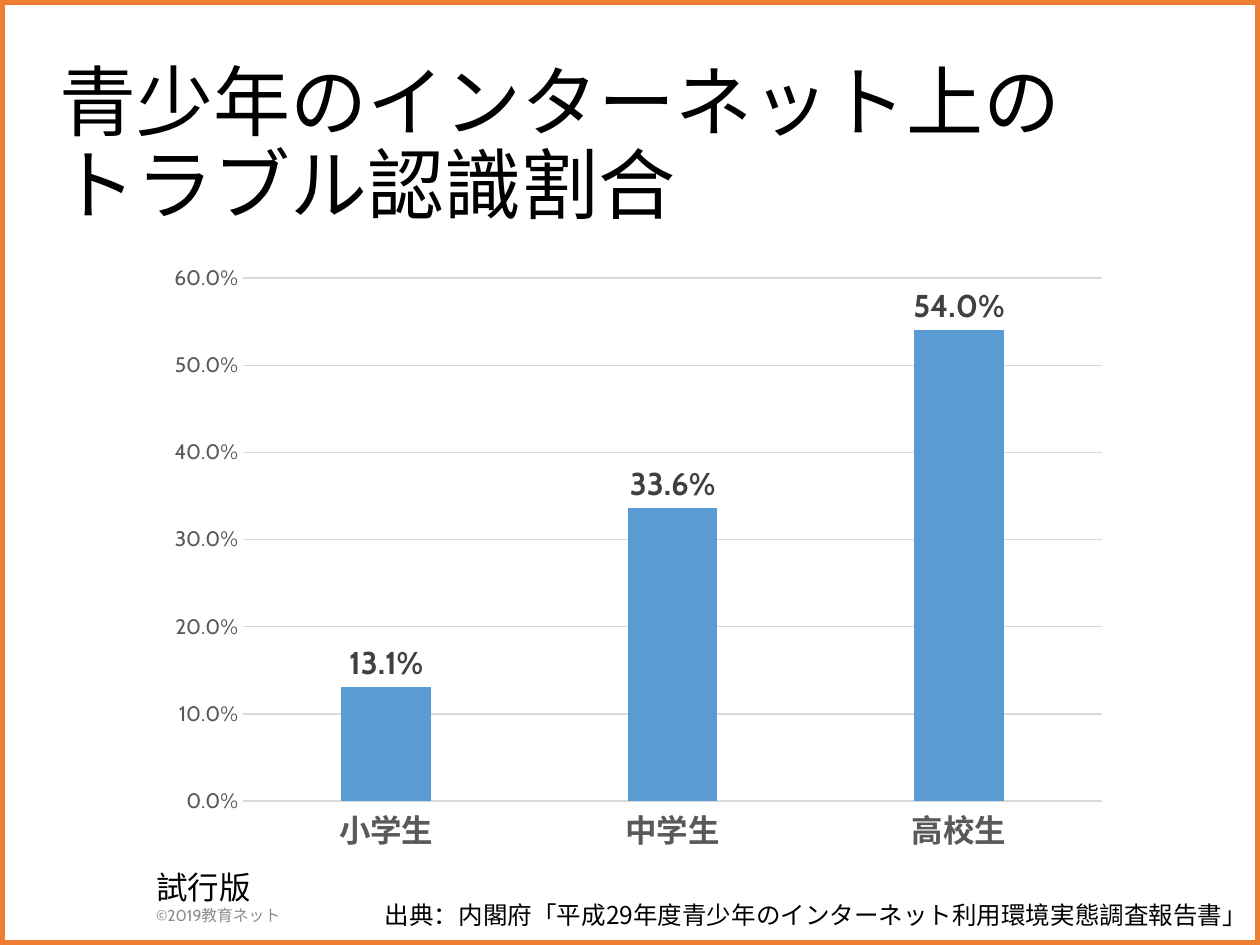
import pptx
import pptx.chart.data
import pptx.dml.color
import pptx.enum.chart
import pptx.enum.shapes
import pptx.enum.text
import pptx.oxml.ns
import pptx.util
from lxml import etree
from pptx.dml.color import RGBColor
from pptx.util import Inches, Pt

LATIN_FONT = "Cabin"
JAPANESE_FONT = "Noto Sans CJK JP"
BLACK = RGBColor(0x00, 0x00, 0x00)
ORANGE = RGBColor(0xED, 0x7D, 0x31)
BLUE = RGBColor(0x5B, 0x9B, 0xD5)
LABEL_GRAY = RGBColor(0x40, 0x40, 0x40)
AXIS_GRAY = RGBColor(0x59, 0x59, 0x59)
NOTE_GRAY = RGBColor(0x8C, 0x8C, 0x8C)
GRID_GRAY = RGBColor(0xD9, 0xD9, 0xD9)

TITLE = "青少年のインターネット上のトラブル認識割合"
EDITION = [("試行版", 18, LATIN_FONT, BLACK), ("©2019教育ネット", 9, LATIN_FONT, NOTE_GRAY)]
SOURCE = [("出典：内閣府「平成29年度青少年のインターネット利用環境実態調査報告書」",
           14, JAPANESE_FONT, BLACK)]
TROUBLE_RATES = {"小学生": 0.131, "中学生": 0.336, "高校生": 0.54}
PERCENT = "0.0%"
LEFT = pptx.enum.text.PP_ALIGN.LEFT
RIGHT = pptx.enum.text.PP_ALIGN.RIGHT


def style_font(font, size, color, name=LATIN_FONT, bold=False):
    font.size, font.name, font.bold = Pt(size), name, bold
    font.color.rgb = color


def style_paragraph(para, size, color, name):
    """Set the paragraph font, with the Japanese face for East Asian text."""
    style_font(para.font, size, color, name)
    defaults = para._p.pPr.find(pptx.oxml.ns.qn("a:defRPr"))
    east_asian = etree.SubElement(defaults, pptx.oxml.ns.qn("a:ea"))
    east_asian.set("typeface", JAPANESE_FONT)


def add_text(page, place, lines, align):
    box = page.shapes.add_textbox(*map(Inches, place))
    frame = box.text_frame
    frame.word_wrap = True
    frame.text = "\n".join(line[0] for line in lines)
    for para, (_, size, name, color) in zip(frame.paragraphs, lines):
        para.alignment = align
        style_paragraph(para, size, color, name)


def add_border(page, deck):
    border = page.shapes.add_shape(pptx.enum.shapes.MSO_SHAPE.RECTANGLE,
                                   0, 0, deck.slide_width, deck.slide_height)
    border.shadow.inherit = False
    border.fill.background()
    border.line.color.rgb = ORANGE
    border.line.width = Pt(6)


def set_title(page):
    title = page.shapes.title
    title.left, title.top, title.width, title.height = map(Inches, (0.37, 0.44, 8.62, 1.45))
    frame = title.text_frame
    frame.text = TITLE
    frame.auto_size = pptx.enum.text.MSO_AUTO_SIZE.NONE
    frame.vertical_anchor = pptx.enum.text.MSO_ANCHOR.MIDDLE
    para = frame.paragraphs[0]
    para.alignment = LEFT
    para.line_spacing = 0.9
    style_paragraph(para, 44, BLACK, JAPANESE_FONT)


def add_rate_chart(page):
    data = pptx.chart.data.CategoryChartData(number_format=PERCENT)
    data.categories = list(TROUBLE_RATES)
    data.add_series("Series 1", list(TROUBLE_RATES.values()))
    chart = page.shapes.add_chart(pptx.enum.chart.XL_CHART_TYPE.COLUMN_CLUSTERED,
                                  *map(Inches, (1.23, 2.01, 7.67, 4.85)), data).chart
    chart.has_legend = False
    chart.has_title = False
    style_font(chart.font, 10, BLACK)

    plot = chart.plots[0]
    plot.gap_width, plot.overlap, plot.vary_by_categories = 219, -27, False
    bars = plot.series[0]
    bars.format.fill.solid()
    bars.format.fill.fore_color.rgb = BLUE
    labels = bars.data_labels
    labels.show_value = True
    labels.number_format, labels.number_format_is_linked = PERCENT, False
    labels.position = pptx.enum.chart.XL_LABEL_POSITION.OUTSIDE_END
    style_font(labels.font, 18, LABEL_GRAY, bold=True)

    groups, rates = chart.category_axis, chart.value_axis
    for axis in (groups, rates):
        axis.major_tick_mark = axis.minor_tick_mark = pptx.enum.chart.XL_TICK_MARK.NONE
    style_font(groups.tick_labels.font, 18, AXIS_GRAY, bold=True)
    style_font(rates.tick_labels.font, 12, AXIS_GRAY)
    rates.minimum_scale, rates.maximum_scale, rates.major_unit = 0, 0.6, 0.1
    rates.tick_labels.number_format = PERCENT
    rates.tick_labels.number_format_is_linked = False
    rates.format.line.fill.background()
    for line in (groups.format.line, rates.major_gridlines.format.line):
        line.color.rgb = GRID_GRAY
        line.width = Pt(0.75)


def main():
    deck = pptx.Presentation()
    deck.slide_width, deck.slide_height = Inches(10), Inches(7.5)
    page = deck.slides.add_slide(deck.slide_layouts.get_by_name("Title Only"))
    add_border(page, deck)
    add_text(page, (1.14, 6.84, 2.89, 0.57), EDITION, LEFT)
    set_title(page)
    add_rate_chart(page)
    add_text(page, (2.56, 7.09, 7.44, 0.34), SOURCE, RIGHT)
    deck.save("out.pptx")


if __name__ == "__main__":
    main()
